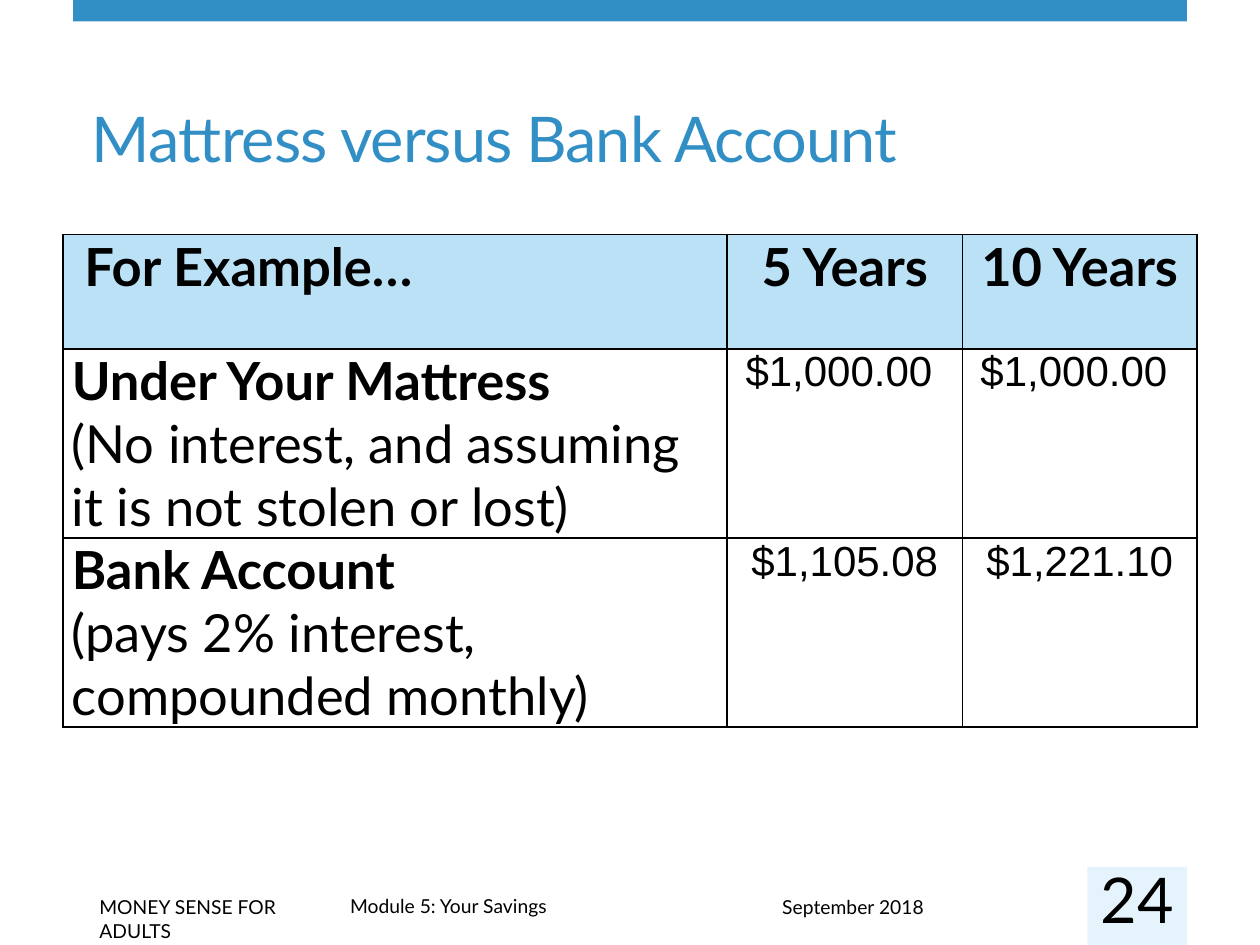
from dataclasses import dataclass

from lxml import etree
from pptx import Presentation
from pptx.dml.color import RGBColor
from pptx.enum.shapes import MSO_SHAPE
from pptx.enum.text import MSO_ANCHOR, MSO_AUTO_SIZE, PP_ALIGN
from pptx.oxml.ns import qn
from pptx.util import Inches, Pt

RECT = MSO_SHAPE.RECTANGLE
BOTTOM = MSO_ANCHOR.BOTTOM
TOP = MSO_ANCHOR.TOP
NO_FIT = MSO_AUTO_SIZE.NONE
LEFT, CENTER = PP_ALIGN.LEFT, PP_ALIGN.CENTER


@dataclass(frozen=True)
class Theme:
    blue: str = "318FC5"
    pale: str = "E4F3FC"
    head: str = "76C5EF"
    ink: str = "000000"
    face: str = "Lato"
    plain: str = "Arial"
    title: int = 36
    label: int = 30
    money: int = 24
    foot: int = 11


THEME = Theme()

# Table content: a label may carry a lighter note below it
HEADS = ["For Example…", "5 Years", "10 Years"]
ROWS = [
    [("Under Your Mattress", "(No interest, and assuming it is not stolen or lost)"),
     "$1,000.00 ", "$1,000.00 "],
    [("Bank Account", "(pays 2% interest, compounded monthly)"),
     "$1,105.08", "$1,221.10"],
]
COLS = [5.27, 1.87, 1.86]
HEIGHTS = [0.91, 1.5, 1.5]


def style(font, size, color=THEME.ink, face=THEME.face, bold=False):
    for key, value in {"size": Pt(size), "name": face, "bold": bold}.items():
        setattr(font, key, value)
    font.color.rgb = RGBColor.from_string(color)


def add_run(para, text, size, **look):
    run = para.add_run()
    run.text = text
    style(run.font, size, **look)
    return run


def add_block(slide, box, color):
    block = slide.shapes.add_shape(RECT, *map(Inches, box))
    block.shadow.inherit = False
    block.fill.solid()
    block.fill.fore_color.rgb = RGBColor.from_string(color)
    block.line.fill.background()


def add_label(slide, box, text, size, align=LEFT, inset=None):
    frame = slide.shapes.add_textbox(*map(Inches, box)).text_frame
    frame.word_wrap = True
    if inset is not None:
        for side in ("left", "top", "right", "bottom"):
            setattr(frame, f"margin_{side}", Inches(inset))
    para = frame.paragraphs[0]
    para.alignment = align
    add_run(para, text, size)


def add_title(slide, box, text):
    title = slide.shapes.title
    for key, value in zip(("left", "top", "width", "height"), box):
        setattr(title, key, Inches(value))
    frame = title.text_frame
    for key, value in {"auto_size": NO_FIT, "word_wrap": True,
                       "vertical_anchor": BOTTOM}.items():
        setattr(frame, key, value)
    para = frame.paragraphs[0]
    para.alignment = LEFT
    run = add_run(para, text, THEME.title, color=THEME.blue)
    run.font._element.set("spc", "-60")


def add_border(cell):
    props = cell._tc.get_or_add_tcPr()
    for spot, side in enumerate(("lnL", "lnR", "lnT", "lnB")):
        line = etree.Element(qn(f"a:{side}"), w=str(Pt(1)))
        fill = etree.SubElement(line, qn("a:solidFill"))
        etree.SubElement(fill, qn("a:srgbClr"), val=THEME.ink)
        props.insert(spot, line)


def fill_head(cell):
    cell.fill.solid()
    cell.fill.fore_color.rgb = RGBColor.from_string(THEME.head)
    color = cell._tc.tcPr.find(f".//{qn('a:srgbClr')}")
    etree.SubElement(color, qn("a:alpha"), val="50000")


def fill_cell(cell, value, row, col):
    indent = 0.17 if row == col == 0 else 0.07
    for key, size in {"left": indent, "top": 0, "right": 0.07, "bottom": 0}.items():
        setattr(cell, f"margin_{key}", Inches(size))
    cell.vertical_anchor = TOP
    para = cell.text_frame.paragraphs[0]
    para.alignment = CENTER if col else LEFT
    para.space_after = Pt(3)
    if row == 0:
        add_run(para, value, THEME.label, bold=True)
        fill_head(cell)
    else:
        cell.fill.background()
        if col == 0:
            name, note = value
            add_run(para, name, THEME.label, bold=True)
            para.add_line_break()
            add_run(para, note, THEME.label)
        else:
            add_run(para, value, THEME.money, face=THEME.plain)
    add_border(cell)


def add_savings(slide, box):
    data = [HEADS, *ROWS]
    table = slide.shapes.add_table(len(data), len(COLS), *map(Inches, box)).table
    table.first_row = table.horz_banding = False
    for col, width in zip(table.columns, COLS):
        col.width = Inches(width)
    for line, height in zip(table.rows, HEIGHTS):
        line.height = Inches(height)
    for row, values in enumerate(data):
        for col, value in enumerate(values):
            fill_cell(table.cell(row, col), value, row, col)


def add_footer(slide, box):
    left, top, width, height = box
    # Course, module and date
    for x, y, wide, text in [
        (0.11, 0.18, 2.09, "MONEY SENSE FOR ADULTS"),
        (2.1, 0.17, 3.4, "Module 5: Your Savings"),
        (5.53, 0.18, 2.52, "September 2018"),
    ]:
        add_label(slide, (left + x, top + y, wide, 0.29), text, THEME.foot)
    # Page number on its tile
    tile = 0.79
    edge = left + width - tile
    add_block(slide, (edge, top, tile, height), THEME.pale)
    add_label(slide, (edge, top - 0.05, tile, 0.45), "24", THEME.title, CENTER, 0)


def main():
    deck = Presentation()
    deck.slide_width, deck.slide_height = Inches(10), Inches(7.5)
    slide = deck.slides.add_slide(deck.slide_layouts[5])
    add_block(slide, (0.58, 0, 8.84, 0.17), THEME.blue)
    add_title(slide, (0.63, 0.48, 8.2, 0.96), "Mattress versus Bank Account")
    add_savings(slide, (0.5, 1.86, sum(COLS), sum(HEIGHTS)))
    add_footer(slide, (0.58, 6.88, 8.84, 0.62))
    deck.save("out.pptx")


if __name__ == "__main__":
    main()
